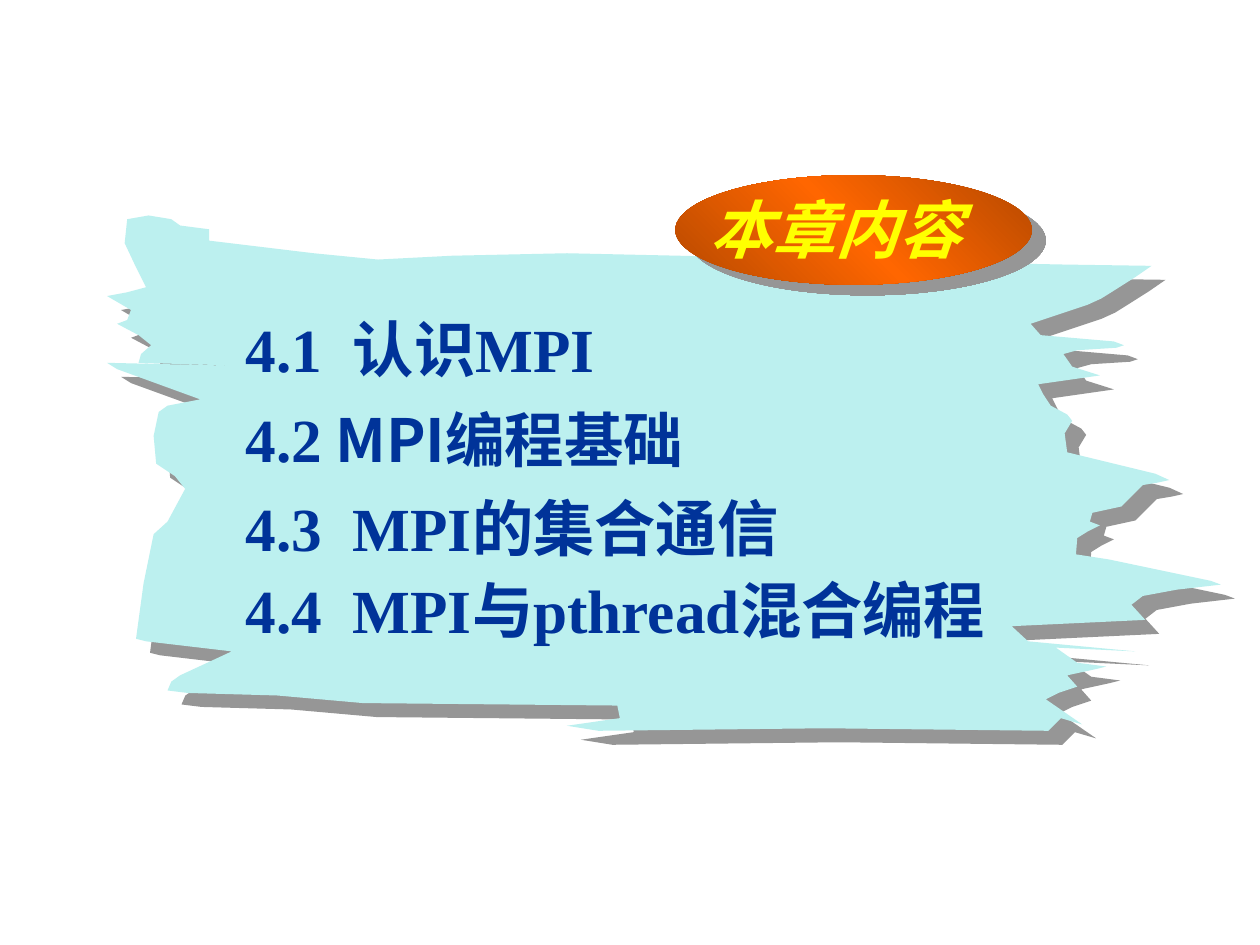
from lxml import etree
from pptx import Presentation
from pptx.dml.color import RGBColor
from pptx.enum.shapes import MSO_SHAPE
from pptx.enum.text import MSO_ANCHOR, MSO_AUTO_SIZE, PP_ALIGN
from pptx.oxml import parse_xml
from pptx.oxml.ns import nsdecls, qn
from pptx.util import Inches, Pt

ELLIPSE = MSO_SHAPE.OVAL
TOP = MSO_ANCHOR.TOP
LEFT = PP_ALIGN.LEFT
NO_AUTOFIT = MSO_AUTO_SIZE.NONE

AQUA = RGBColor(0xBC, 0xF0, 0xEF)
GRAY = RGBColor(0x96, 0x96, 0x96)
DARK_GRAY = RGBColor(0x60, 0x60, 0x60)
NAVY = RGBColor(0x00, 0x33, 0x99)
YELLOW = RGBColor(0xFF, 0xFF, 0x00)
ORANGE = RGBColor(0xFF, 0x66, 0x00)
BROWN = RGBColor(0xB6, 0x49, 0x00)

SERIF = "Times New Roman"
SANS = "Noto Sans CJK SC"

# The grid has 1000 columns and 750 rows of square cells.
CELL = Inches(0.01)

BRUSH_STROKE = [
    # top edge
    (166, 191), (249, 201), (300, 206), (359, 203), (450, 201), (539, 203),
    (745, 208), (845, 210),
    # ragged right edge
    (914, 211), (901, 220), (882, 232), (874, 237), (863, 242), (818, 257),
    (826, 266), (884, 271), (892, 274), (886, 276), (855, 278), (844, 281),
    (851, 291), (873, 298), (824, 305), (828, 313), (834, 322), (847, 329),
    (851, 334), (845, 344), (847, 359), (917, 376), (928, 381), (919, 383),
    (907, 385), (890, 402), (867, 407), (865, 414), (873, 417), (863, 422),
    (855, 427), (854, 440), (880, 444), (961, 461), (969, 464), (934, 468),
    (907, 473), (898, 480), (909, 492), (803, 497), (816, 509), (901, 517),
    (838, 514), (855, 526), (878, 529), (870, 531), (847, 536), (855, 545),
    (840, 550), (830, 555), (859, 575), (842, 570), (832, 580),
    # bottom edge
    (655, 578), (475, 580), (450, 576), (492, 570), (490, 560), (288, 558),
    (220, 552), (149, 550), (133, 548), (136, 541), (143, 536), (184, 517),
    (116, 509), (108, 507),
    # ragged left edge
    (114, 463), (122, 424), (133, 414), (147, 388), (139, 378), (124, 368),
    (122, 346), (126, 327), (133, 322), (159, 317), (126, 305), (93, 293),
    (85, 288), (218, 291), (110, 288), (112, 281), (120, 274), (110, 266),
    (93, 257), (101, 254), (104, 246), (85, 235), (101, 232), (116, 228),
    (107, 210), (99, 193), (101, 174), (118, 171), (136, 174), (143, 179),
    (166, 182),
]

SECTIONS = [
    ((185, 241, 542, 93), [("4.1  认识MPI", SERIF, 35)]),
    ((185, 312, 652, 69), [("4.2", SERIF, 35), (" MPI编程基础", SANS, 34)]),
    ((185, 383, 535, 69), [("4.3  MPI的集合通信", SERIF, 35)]),
    ((185, 448, 622, 69), [("4.4  MPI与pthread混合编程", SERIF, 35)]),
]


def shadow_effect(color, distance, angle):
    return parse_xml(
        f'<a:effectLst {nsdecls("a")}><a:outerShdw dist="{Pt(distance)}" '
        f'dir="{angle * 60000}" algn="ctr" rotWithShape="0">'
        f'<a:srgbClr val="{color}"/></a:outerShdw></a:effectLst>')


class ChapterSlide:
    def __init__(self, deck):
        self.slide = deck.slides.add_slide(deck.slide_layouts[5])
        self.shapes = self.slide.shapes

    def cast_shadow(self, shape, distance, angle):
        shape.line.fill.background()
        shape.shadow.inherit = False
        properties = shape._element.spPr
        properties.remove(properties.find(qn("a:effectLst")))
        properties.append(shadow_effect(GRAY, distance, angle))

    def outline(self, points, color):
        builder = self.shapes.build_freeform(*points[0], scale=float(CELL))
        builder.add_line_segments(points[1:], close=True)
        shape = builder.convert_to_shape()
        shape.fill.solid()
        shape.fill.fore_color.rgb = color
        self.cast_shadow(shape, 11.3, 45)

    def badge(self, area, edge, middle):
        shape = self.shapes.add_shape(ELLIPSE, *(CELL * part for part in area))
        shape.fill.gradient()
        shape.fill.gradient_angle = 45
        stops = shape._element.spPr.find(qn("a:gradFill")).find(qn("a:gsLst"))
        for stop in list(stops):
            stops.remove(stop)
        for position, color in ((0, edge), (50, middle), (100, edge)):
            stop = etree.SubElement(stops, qn("a:gs"), pos=str(position * 1000))
            etree.SubElement(stop, qn("a:srgbClr"), val=str(color))
        self.cast_shadow(shape, 10, 37)

    def fill_text(self, box, runs, color, leading):
        frame = box.text_frame
        frame.word_wrap = True
        frame.auto_size = NO_AUTOFIT
        frame.vertical_anchor = TOP
        para = frame.paragraphs[0]
        para.alignment = LEFT
        para.line_spacing = Pt(leading)
        para.space_before = Pt(0)
        for text, font, size in runs:
            span = para.add_run()
            span.text = text
            span.font.name = font
            span.font.size = Pt(size)
            span.font.bold = True
            span.font.color.rgb = color
            latin = span.font._element.find(qn("a:latin"))
            latin.addnext(parse_xml(f'<a:ea {nsdecls("a")} typeface="{SANS}"/>'))
        return para

    def text(self, area, runs):
        box = self.shapes.add_textbox(*(CELL * part for part in area))
        self.fill_text(box, runs, NAVY, 43)

    def title(self, area, text):
        """Place the title in front of the shapes drawn so far."""
        box = self.shapes.title
        box.left, box.top, box.width, box.height = (CELL * part for part in area)
        self.shapes._spTree.append(box._element)
        para = self.fill_text(box, [(text, SERIF, 36)], YELLOW, 44)
        font = para.runs[0].font
        font.italic = True
        latin = font._element.find(qn("a:latin"))
        latin.addprevious(shadow_effect(DARK_GRAY, 2, 45))


def main():
    deck = Presentation()
    deck.slide_width = CELL * 1000
    deck.slide_height = CELL * 750
    page = ChapterSlide(deck)
    page.outline(BRUSH_STROKE, AQUA)
    page.badge((536, 139, 283, 87), BROWN, ORANGE)
    page.title((553, 145, 246, 125), "本章内容")
    for area, runs in SECTIONS:
        page.text(area, runs)
    deck.save("out.pptx")


if __name__ == "__main__":
    main()
